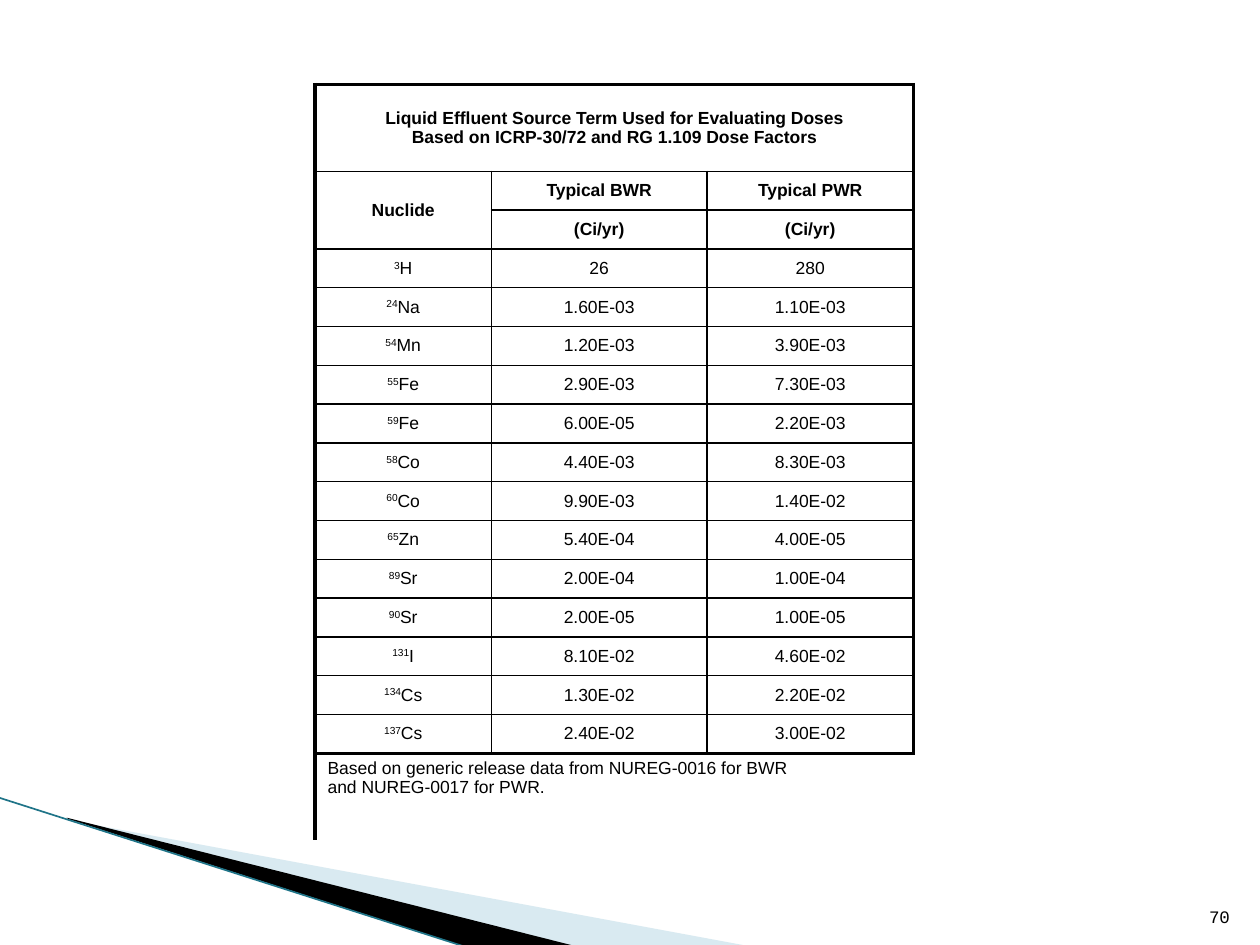
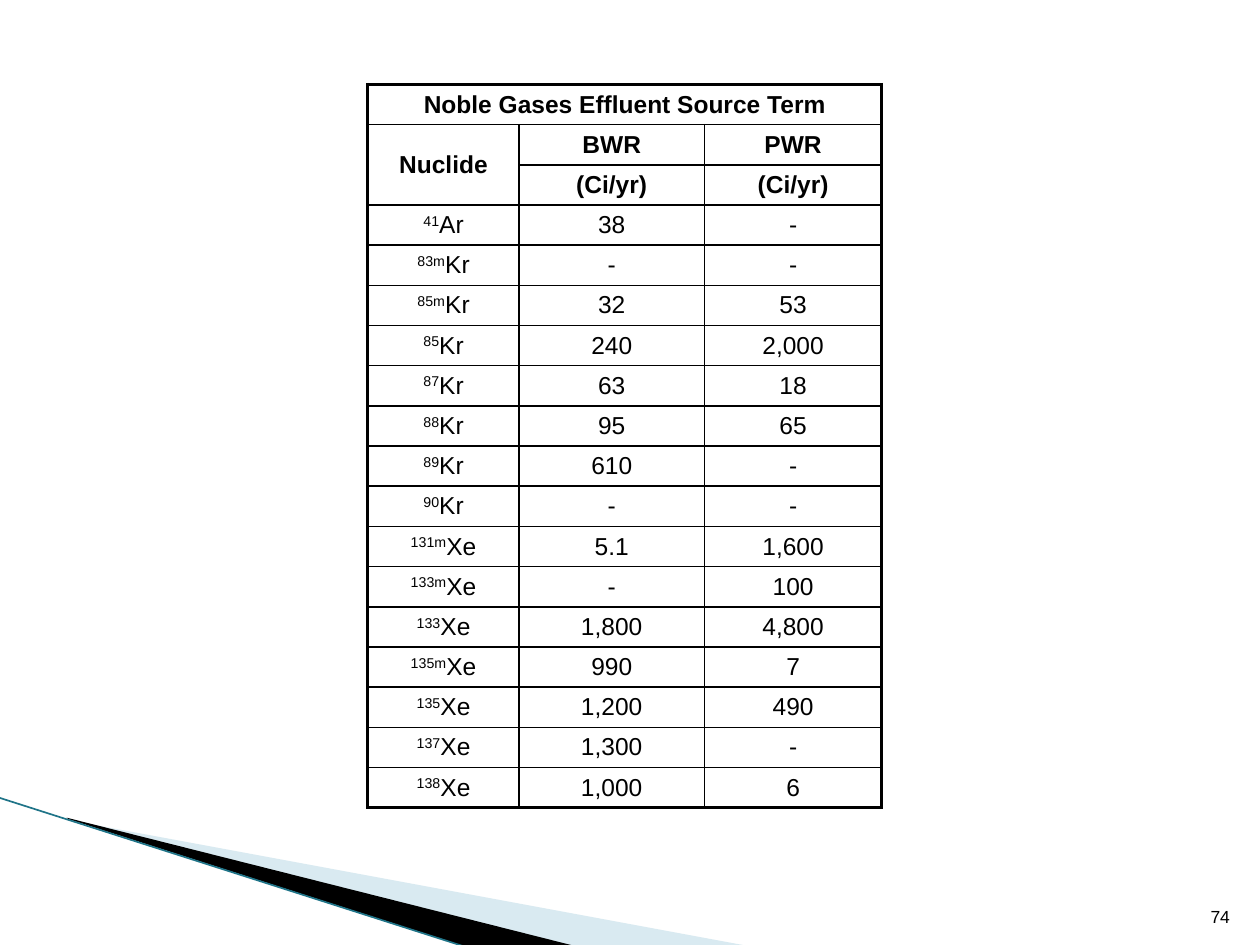
import pptx
import pptx.util
import pptx.dml.color
import pptx.enum.shapes
import pptx.enum.text
from lxml import etree

# ---- Content ----
UNIT = "(Ci/yr)"
LIQUID_TERMS = [
    ("3", "H", "26", "280"),
    ("24", "Na", "1.60E-03", "1.10E-03"),
    ("54", "Mn", "1.20E-03", "3.90E-03"),
    ("55", "Fe", "2.90E-03", "7.30E-03"),
    ("59", "Fe", "6.00E-05", "2.20E-03"),
    ("58", "Co", "4.40E-03", "8.30E-03"),
    ("60", "Co", "9.90E-03", "1.40E-02"),
    ("65", "Zn", "5.40E-04", "4.00E-05"),
    ("89", "Sr", "2.00E-04", "1.00E-04"),
    ("90", "Sr", "2.00E-05", "1.00E-05"),
    ("131", "I", "8.10E-02", "4.60E-02"),
    ("134", "Cs", "1.30E-02", "2.20E-02"),
    ("137", "Cs", "2.40E-02", "3.00E-02"),
]
NOBLE_GAS_TERMS = [
    ("41", "Ar", "38", "-"),
    ("83m", "Kr", "-", "-"),
    ("85m", "Kr", "32", "53"),
    ("85", "Kr", "240", "2,000"),
    ("87", "Kr", "63", "18"),
    ("88", "Kr", "95", "65"),
    ("89", "Kr", "610", "-"),
    ("90", "Kr", "-", "-"),
    ("131m", "Xe", "5.1", "1,600"),
    ("133m", "Xe", "-", "100"),
    ("133", "Xe", "1,800", "4,800"),
    ("135m", "Xe", "990", "7"),
    ("135", "Xe", "1,200", "490"),
    ("137", "Xe", "1,300", "-"),
    ("138", "Xe", "1,000", "6"),
]
PAGES = [
    dict(
        number="70", number_font="Courier New",
        title=["Liquid Effluent Source Term Used for Evaluating Doses",
               "Based on ICRP-30/72 and RG 1.109 Dose Factors"],
        reactors=("Typical BWR", "Typical PWR"), terms=LIQUID_TERMS,
        footnote=["Based on generic release data from NUREG-0016 for BWR",
                  "and NUREG-0017 for PWR."],
        left=2.5, columns=(1.4, 1.71, 1.64), title_height=0.69,
        row_height=0.308, size=10),
    dict(
        number="74", number_font="Arial",
        title=["Noble Gases Effluent Source Term"],
        reactors=("BWR", "PWR"), terms=NOBLE_GAS_TERMS, footnote=None,
        left=2.92, columns=(1.2, 1.47, 1.41), title_height=0.319,
        row_height=0.319, size=14),
]

# ---- Theme ----
THEME = dict(
    font="Arial", ink="000000", paper="FFFFFF", pale="A0CBDC", teal="1F7488",
    number_size=10, thin=1, thick=2, stripe=0.95)
WIDTH, HEIGHT = 10, 7.5
TABLE_TOP = 0.67
CELL_MARGIN = 0.04
PALE_BAND = [(0.55, 6.51), (5.95, 7.51), (4.56, 7.51), (0.55, 6.5)]
DARK_BAND = [(0.53, 6.49), (4.57, 7.51), (3.72, 7.52), (0.54, 6.5)]
STRIPE = (-0.01, 6.33, 3.71, 7.52)

inch = pptx.util.Inches
CENTER = pptx.enum.text.PP_ALIGN.CENTER
MIDDLE = pptx.enum.text.MSO_ANCHOR.MIDDLE


def color(name):
    return pptx.dml.color.RGBColor.from_string(THEME[name])


# ---- Text ----
def add_span(para, text, size, bold=False, raised=False, font=THEME["font"]):
    span = para.add_run()
    span.text = text
    span.font.name = font
    span.font.size = pptx.util.Pt(size)
    span.font.bold = bold
    span.font.color.rgb = color("ink")
    if raised:
        span.font._element.set("baseline", "30000")


def add_lines(para, lines, size, bold=False):
    for index, line in enumerate(lines):
        if index:
            para.add_line_break()
        add_span(para, line, size, bold)


# ---- Corner bands and page number ----
def add_band(page, points, fill, opacity=None):
    builder = page.shapes.build_freeform(
        inch(points[0][0]), inch(points[0][1]), scale=1.0)
    builder.add_line_segments([(inch(x), inch(y)) for x, y in points[1:]])
    band = builder.convert_to_shape()
    band.shadow.inherit = False
    band.line.fill.background()
    band.fill.solid()
    band.fill.fore_color.rgb = color(fill)
    if opacity:
        tint = band._element.spPr.find(".//" + pptx.oxml.ns.qn("a:srgbClr"))
        etree.SubElement(tint, pptx.oxml.ns.qn("a:alpha"), val=str(opacity * 1000))


def add_frame(page, number, font):
    add_band(page, PALE_BAND, "pale", 40)
    add_band(page, DARK_BAND, "ink")
    stripe = page.shapes.add_connector(
        pptx.enum.shapes.MSO_CONNECTOR.STRAIGHT, *map(inch, STRIPE))
    stripe.line.color.rgb = color("teal")
    stripe.line.width = pptx.util.Pt(THEME["stripe"])
    etree.SubElement(stripe._element.spPr, pptx.oxml.ns.qn("a:effectLst"))

    box = page.shapes.add_textbox(inch(9.46), inch(7.01), inch(0.4), inch(0.4))
    frame = box.text_frame
    frame.word_wrap = True
    frame.vertical_anchor = pptx.enum.text.MSO_ANCHOR.BOTTOM
    para = frame.paragraphs[0]
    para.alignment = pptx.enum.text.PP_ALIGN.RIGHT
    add_span(para, number, THEME["number_size"], font=font)


# ---- Table ----
def set_borders(cell, widths):
    """Widths in points for left, right, top, bottom; 0 means no line."""
    properties = cell._tc.get_or_add_tcPr()
    for position, (side, width) in enumerate(zip("LRTB", widths)):
        edge = etree.Element(pptx.oxml.ns.qn("a:ln" + side),
                             w=str(pptx.util.Pt(width)))
        if width:
            fill = etree.SubElement(edge, pptx.oxml.ns.qn("a:solidFill"))
            etree.SubElement(fill, pptx.oxml.ns.qn("a:srgbClr"), val=THEME["ink"])
        else:
            etree.SubElement(edge, pptx.oxml.ns.qn("a:noFill"))
        properties.insert(position, edge)


def add_source_table(page, data):
    terms, size, footnote = data["terms"], data["size"], data["footnote"]
    last_row = len(terms) + 2
    heights = [data["title_height"]] + [data["row_height"]] * last_row
    if footnote:
        heights.append(data["title_height"])
    columns = data["columns"]
    table = page.shapes.add_table(
        len(heights), len(columns), inch(data["left"]), inch(TABLE_TOP),
        inch(sum(columns)), inch(sum(heights))).table
    table.first_row = table.horz_banding = False
    for column, width in zip(table.columns, columns):
        column.width = inch(width)
    for row, height in zip(table.rows, heights):
        row.height = inch(height)

    # Merged title, nuclide heading and footnote
    table.cell(0, 0).merge(table.cell(0, 2))
    table.cell(1, 0).merge(table.cell(2, 0))
    if footnote:
        table.cell(last_row + 1, 0).merge(table.cell(last_row + 1, 2))

    # Fill and borders: thick outside, thin inside, open footnote
    thin, thick = THEME["thin"], THEME["thick"]
    for row in range(len(heights)):
        for column in range(len(columns)):
            cell = table.cell(row, column)
            cell.fill.solid()
            cell.fill.fore_color.rgb = color("paper")
            cell.vertical_anchor = MIDDLE
            cell.margin_top = cell.margin_bottom = inch(CELL_MARGIN)
            cell.text_frame.paragraphs[0].alignment = CENTER
            if row > last_row:
                set_borders(cell, (0 if column else thick, 0, thick, 0))
                continue
            at_right = column == 2 or row == 0
            set_borders(cell, (thin if column else thick,
                               thick if at_right else thin,
                               thin if row else thick,
                               thick if row == last_row else thin))

    # Words and values
    def para_at(row, column):
        return table.cell(row, column).text_frame.paragraphs[0]

    add_lines(para_at(0, 0), data["title"], size, bold=True)
    add_span(para_at(1, 0), "Nuclide", size, bold=True)
    for column, reactor in enumerate(data["reactors"], 1):
        add_span(para_at(1, column), reactor, size, bold=True)
        add_span(para_at(2, column), UNIT, size, bold=True)
    for row, (mass, element, *values) in enumerate(terms, 3):
        add_span(para_at(row, 0), mass, size, raised=True)
        add_span(para_at(row, 0), element, size)
        for column, value in enumerate(values, 1):
            add_span(para_at(row, column), value, size)
    if footnote:
        table.cell(last_row + 1, 0).vertical_anchor = pptx.enum.text.MSO_ANCHOR.TOP
        para = para_at(last_row + 1, 0)
        para.alignment = pptx.enum.text.PP_ALIGN.LEFT
        add_lines(para, footnote, size)


def main():
    deck = pptx.Presentation()
    deck.slide_width, deck.slide_height = inch(WIDTH), inch(HEIGHT)
    for data in PAGES:
        page = deck.slides.add_slide(deck.slide_layouts[6])
        add_frame(page, data["number"], data["number_font"])
        add_source_table(page, data)
    deck.save("out.pptx")


if __name__ == "__main__":
    main()
